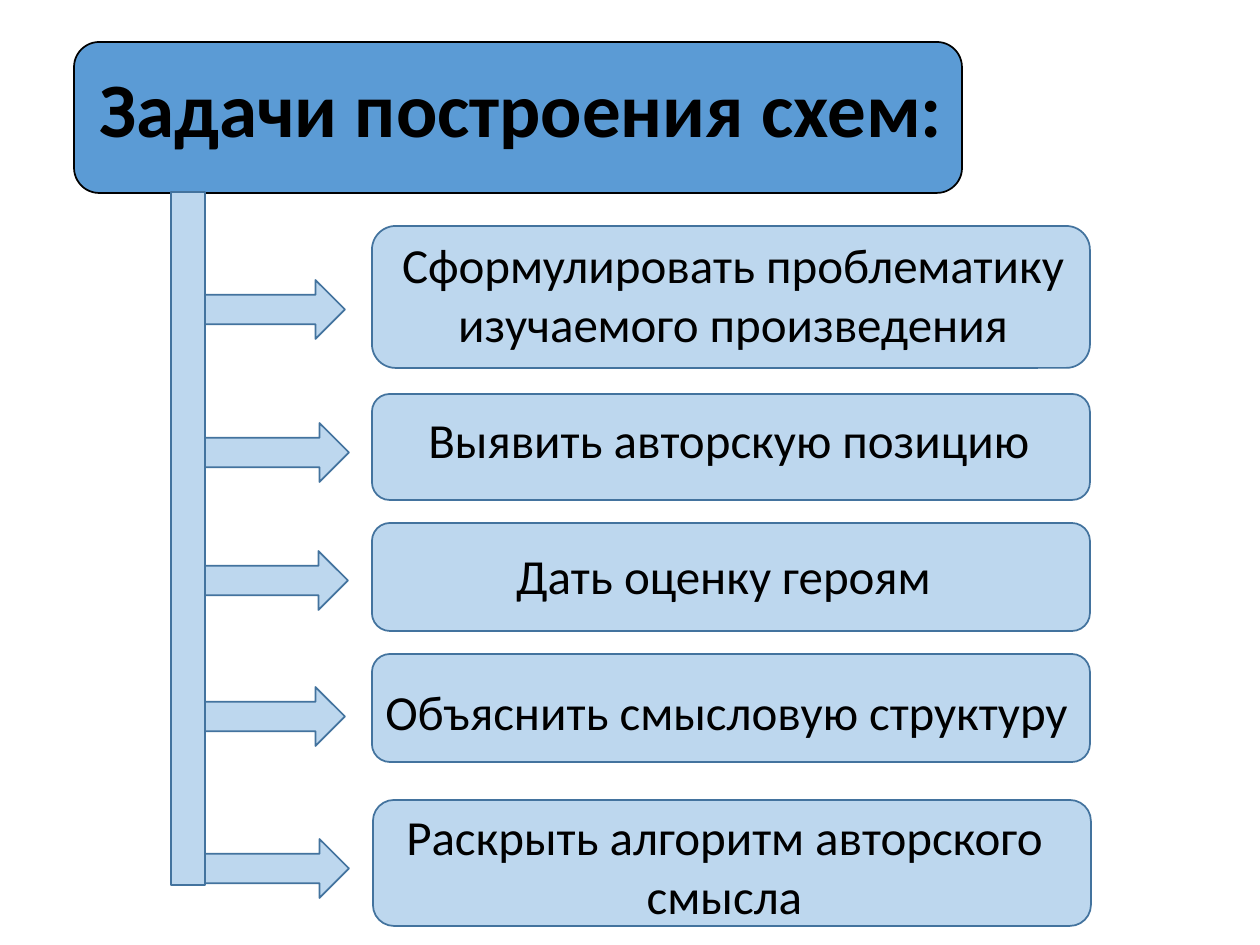
"""Build a slide listing the tasks of drawing schemes."""
from pptx import Presentation
from pptx.dml.color import RGBColor
from pptx.enum.shapes import MSO_SHAPE as SHAPE
from pptx.enum.text import MSO_ANCHOR as ANCHOR, PP_ALIGN as ALIGN
from pptx.util import Pt

PX = 914400 // 126
BLACK = RGBColor(0x00, 0x00, 0x00)
BLUE = RGBColor(0x5B, 0x9B, 0xD5)
PALE = RGBColor(0xBD, 0xD7, 0xEE)
EDGE = RGBColor(0x43, 0x73, 0x9E)

prs = Presentation()
prs.slide_width, prs.slide_height = 1260 * PX, 945 * PX
s = prs.slides.add_slide(prs.slide_layouts[6])


def add_block(kind, box, fill=PALE, line=EDGE):
    sp = s.shapes.add_shape(kind, *(v * PX for v in box))
    sp.shadow.inherit = False
    sp.fill.solid()
    sp.fill.fore_color.rgb = fill
    sp.line.color.rgb = line
    sp.line.width = Pt(1)


def add_text(text, box, align, size=28, bold=False, anchor=ANCHOR.TOP, spacing=1.0):
    tf = s.shapes.add_textbox(*(v * PX for v in box)).text_frame
    tf.word_wrap = True
    tf.vertical_anchor = anchor
    p = tf.paragraphs[0]
    p.alignment = align
    p.line_spacing = spacing
    r = p.add_run()
    r.text = text
    for name, value in {"name": "Calibri", "size": Pt(size), "bold": bold}.items():
        setattr(r.font, name, value)
    r.font.color.rgb = BLACK


add_block(SHAPE.ROUNDED_RECTANGLE, (74, 42, 888, 151), BLUE, BLACK)
add_text("Задачи построения схем:", (87, 21, 1086, 183), ALIGN.LEFT,
         size=44, bold=True, anchor=ANCHOR.MIDDLE, spacing=0.9)

for x, y in [(195, 280), (199, 423), (198, 551), (195, 687), (199, 839)]:
    add_block(SHAPE.RIGHT_ARROW, (x, y, 150, 59))
add_block(SHAPE.RECTANGLE, (171, 192, 34, 693))

tasks = [
    ("Сформулировать проблематику изучаемого произведения",
     (372, 226, 718, 142), (389, 228, 688, 131), ALIGN.CENTER),
    ("Выявить авторскую позицию",
     (372, 394, 718, 106), (416, 403, 793, 54), ALIGN.LEFT),
    ("Дать оценку героям",
     (372, 523, 718, 108), (418, 539, 611, 72), ALIGN.CENTER),
    ("Объяснить смысловую структуру",
     (372, 654, 718, 108), (373, 675, 793, 72), ALIGN.LEFT),
    ("Раскрыть алгоритм авторского смысла",
     (373, 800, 718, 126), (328, 800, 793, 131), ALIGN.CENTER),
]
for text, frame, text_box, align in tasks:
    add_block(SHAPE.ROUNDED_RECTANGLE, frame)
    add_text(text, text_box, align)

prs.save("out.pptx")
